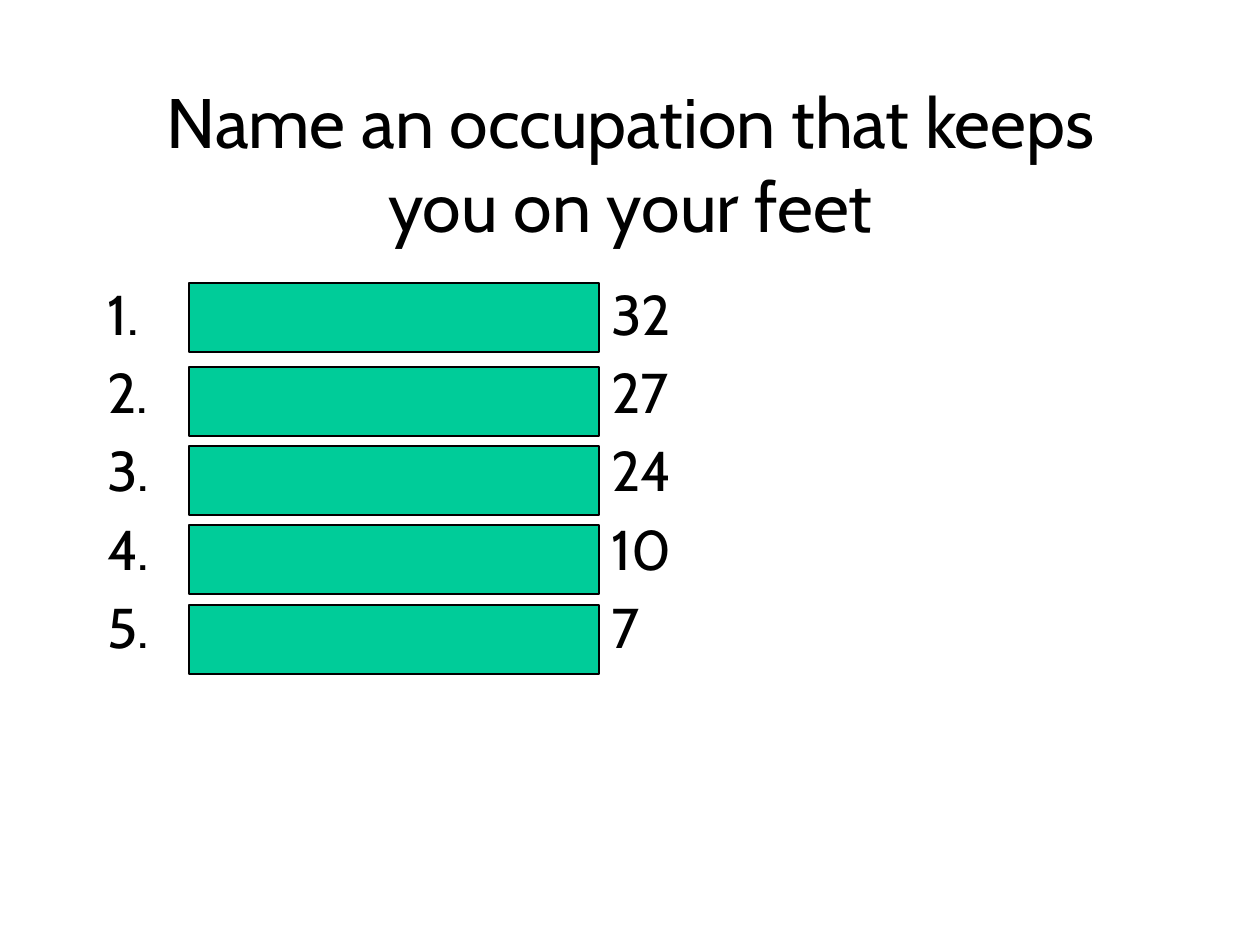
from lxml import etree
from pptx import Presentation
from pptx.dml.color import RGBColor
from pptx.enum.shapes import MSO_SHAPE
from pptx.enum.text import MSO_ANCHOR, PP_ALIGN
from pptx.oxml.ns import qn
from pptx.util import Pt

RECTANGLE = MSO_SHAPE.RECTANGLE
TOP, MIDDLE = MSO_ANCHOR.TOP, MSO_ANCHOR.MIDDLE
LEFT, CENTER = PP_ALIGN.LEFT, PP_ALIGN.CENTER
PX = 914400 / 126
FONT = "Cabin"
COLORS = {"text": "000000", "bar": "00CC99", "outline": "000000", "background": "FFFFFF"}


def px(*lengths):
    return [round(length * PX) for length in lengths]


def add_text(text, box, size, align=LEFT, anchor=TOP, numbered=False):
    frame = slide.shapes.add_textbox(*px(*box)).text_frame
    frame.word_wrap = True
    frame.vertical_anchor = anchor
    frame.text = text
    for paragraph in frame.paragraphs:
        paragraph.alignment = align
        for run in paragraph.runs:
            run.font.name = FONT
            run.font.size = Pt(size)
            run.font.color.rgb = RGBColor.from_string(COLORS["text"])
        if numbered:
            paragraph.space_before = Pt(6.4)
            indent, score_tab = px(84, 504)
            properties = paragraph._p.get_or_add_pPr()
            properties.set("marL", str(indent))
            properties.set("indent", str(-indent))
            properties.set("defTabSz", str(score_tab))
            numbering = etree.Element(qn("a:buAutoNum"), type="arabicPeriod")
            properties.find(qn("a:spcBef")).addnext(numbering)


presentation = Presentation()
presentation.slide_width, presentation.slide_height = px(1260, 945)
slide = presentation.slides.add_slide(presentation.slide_layouts[6])
slide.background.fill.solid()
slide.background.fill.fore_color.rgb = RGBColor.from_string(COLORS["background"])

add_text(
    "Name an occupation that keeps you on your feet",
    (95, 83, 1071, 158), size=40, align=CENTER, anchor=MIDDLE,
)

scores = (32, 27, 24, 10, 7)
add_text(
    "\n".join(f"\t{score}" for score in scores),
    (95, 273, 1071, 567), size=32, numbered=True,
)

for bar_top in (283, 367, 446, 525, 605):
    bar = slide.shapes.add_shape(RECTANGLE, *px(189, bar_top, 410, 69))
    bar.shadow.inherit = False
    bar.fill.solid()
    bar.fill.fore_color.rgb = RGBColor.from_string(COLORS["bar"])
    bar.line.color.rgb = RGBColor.from_string(COLORS["outline"])
    bar.line.width = Pt(0.75)

presentation.save("out.pptx")
